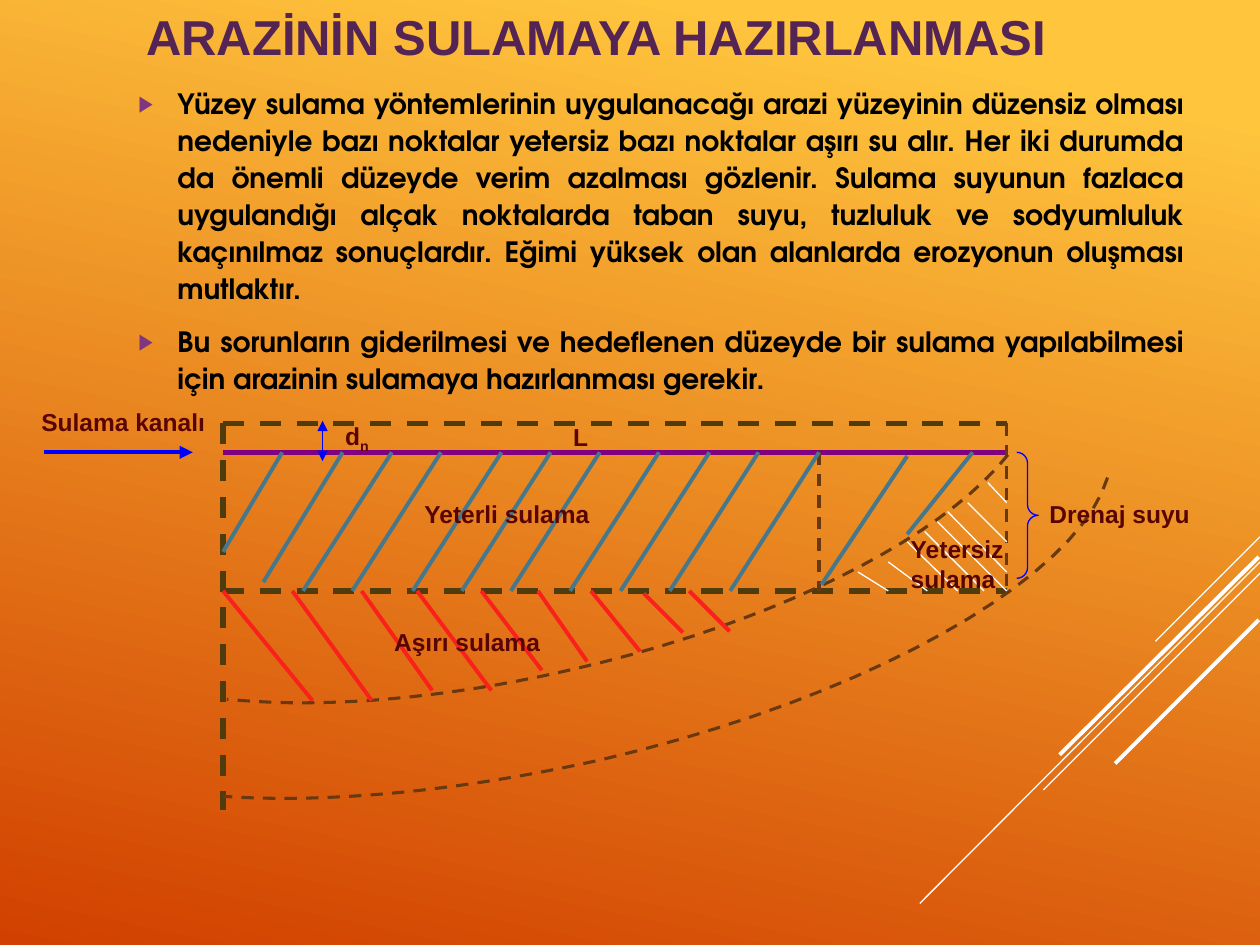
from lxml import etree
from pptx import Presentation
from pptx import util as u
from pptx.dml.color import RGBColor
from pptx.enum import dml, shapes, text
from pptx.oxml.ns import qn

WHITE = RGBColor(0xFF, 0xFF, 0xFF)
BLACK = RGBColor(0, 0, 0)
YELLOW = RGBColor(0xFF, 0xC5, 0x3D)
ORANGE = RGBColor(0xD1, 0x40, 0x00)
PLUM = RGBColor(0x54, 0x24, 0x54)
BULLET = RGBColor(0x7E, 0x36, 0x7E)
MAROON = RGBColor(0x58, 0x05, 0x02)
PURPLE = RGBColor(0x80, 0x00, 0x80)
OLIVE = RGBColor(0x50, 0x3B, 0x0D)
BROWN = RGBColor(0x68, 0x38, 0x0F)
BLUE = RGBColor(0, 0, 0xFF)
TEAL = RGBColor(0x46, 0x78, 0x8D)
RED = RGBColor(0xF9, 0x21, 0x1B)

COLS, ROWS = 100, 75
# Edges of the soil profile, in columns and rows
LEFT, SPLIT, RIGHT = 17.7, 65, 79.9
WATER, SURFACE, ROOT, DEEP = 33.6, 35.9, 46.9, 64.3

TITLE = "ARAZİNİN SULAMAYA HAZIRLANMASI"
BODY = [
    "Yüzey sulama yöntemlerinin uygulanacağı arazi yüzeyinin düzensiz olması "
    "nedeniyle bazı noktalar yetersiz bazı noktalar aşırı su alır. Her iki durumda "
    "da önemli düzeyde verim azalması gözlenir. Sulama suyunun fazlaca uygulandığı "
    "alçak noktalarda taban suyu, tuzluluk ve sodyumluluk kaçınılmaz sonuçlardır. "
    "Eğimi yüksek olan alanlarda erozyonun oluşması mutlaktır.",
    "Bu sorunların giderilmesi ve hedeflenen düzeyde bir sulama yapılabilmesi "
    "için arazinin sulamaya hazırlanması gerekir.",
]
DECOR = [
    (100, 42.6, 91.7, 50.9, 0.75), (100, 44.6, 73, 71.7, 0.75),
    (100, 45.5, 82.8, 62.7, 0.75), (99.9, 44.2, 84.1, 59.9, 2.25),
    (99.9, 49.2, 88.5, 60.6, 2.25),
]
FRAME = [
    (LEFT, SURFACE, RIGHT, SURFACE, PURPLE, 3, False),
    (LEFT, WATER, RIGHT, WATER, OLIVE, 3, True),
    (LEFT, WATER, LEFT, DEEP, OLIVE, 3, True),
    (LEFT, ROOT, RIGHT, ROOT, OLIVE, 3, True),
    (RIGHT, WATER, RIGHT, ROOT, BROWN, 1.75, True),
    (SPLIT, SURFACE, SPLIT, ROOT, BROWN, 1.75, True),
]
# Full-depth hatches all lean by the same run
HATCH_RUN = 7.05
FULL_HATCH_TOPS = [31.1, 35, 39.8, 43.7, 47.6, 52.3, 56.3, 60.2, SPLIT]
ADEQUATE = [
    (22.4, SURFACE, LEFT, 43.8), (27.2, SURFACE, 20.9, 46.2),
    (72, 36.2, 65.2, 46.4), (77.2, SURFACE, 72, 42.4),
] + [(x, SURFACE, x - HATCH_RUN, ROOT) for x in FULL_HATCH_TOPS]
EXCESS = [
    (LEFT, ROOT, 24.8, 55.6), (23.2, ROOT, 29.5, 55.6), (28.7, ROOT, 34.3, 54.8),
    (33.1, ROOT, 39, 54.8), (38.2, ROOT, 43, 53.2), (42.7, ROOT, 46.6, 52.5),
    (46.9, ROOT, 50.8, 51.7), (51.1, 47.1, 54.2, 50.2), (54.7, ROOT, 57.9, 50.1),
]
DEFICIT = [
    (68.1, 45.4, 70.5, ROOT), (70.5, 44.6, 73.6, ROOT), (72, 43, 76, ROOT),
    (73.4, 42.2, 78.1, ROOT), (74.4, 41.4, RIGHT, ROOT), (75.2, 40.6, RIGHT, 45.4),
    (76.8, 39.9, RIGHT, 43), (78.4, 38.3, RIGHT, 39.9),
]
# Each curve: start, then (control, control, end) per piece
CURVES = [
    ((80, 36.1), [((74.6, 42.9), (61.2, 49.5), (45.6, 53.1)),
                  ((35.7, 55.4), (25.9, 56.3), (18, 55.5))]),
    ((87.9, 37.9), [((85.5, 46), (68.7, 55.4), (47.7, 60.3)),
                    ((36.9, 62.7), (26.3, 63.8), (17.7, 63.2))]),
]
LABELS = [
    ("L", 44.5, 33, 7.1), ("Sulama kanalı", 2.3, 31.8, 15.7),
    ("Aşırı sulama", 30.3, 49.3, 15.7), ("Drenaj suyu", 82.3, 39.1, 15.7),
    ("Yetersiz sulama", 71.3, 41.9, 15.7), ("Yeterli sulama", 32.7, 39.1, 15.7),
]


def add_run(p, words, size=14, color=MAROON, font="Arial", baseline=None):
    r = p.add_run()
    r.text = words
    r.font.size, r.font.name, r.font.bold = u.Pt(size), font, True
    r.font.color.rgb = color
    if baseline is not None:
        r._r.get_or_add_rPr().set("baseline", str(baseline * 1000))
    return r


def add_bullet(p, indent, hanging):
    pPr = p._p.get_or_add_pPr()
    pPr.set("marL", str(u.Inches(indent)))
    pPr.set("indent", str(-u.Inches(hanging)))
    color = etree.SubElement(pPr, qn("a:buClr"))
    etree.SubElement(color, qn("a:srgbClr"), val=str(BULLET))
    etree.SubElement(pPr, qn("a:buSzPct"), val="80000")
    etree.SubElement(pPr, qn("a:buFont"), typeface="Arial")
    etree.SubElement(pPr, qn("a:buChar"), char="▶")


def bezier(a, b, c, d, steps=20):
    """Points along a cubic curve, without its start."""
    for i in range(1, steps + 1):
        t = i / steps
        s = 1 - t
        yield tuple(s**3 * j + 3 * s * s * t * k + 3 * s * t * t * m + t**3 * n
                    for j, k, m, n in zip(a, b, c, d))


class Canvas:
    """The current slide, its grid and its style."""

    def __init__(self, prs):
        self.slide = prs.slides.add_slide(prs.slide_layouts[5])
        self.shapes = self.slide.shapes
        self.col, self.row = prs.slide_width / COLS, prs.slide_height / ROWS

    def place(self, *cells):
        """EMU lengths from alternating columns and rows."""
        return [u.Emu(round(n * (self.row if i % 2 else self.col)))
                for i, n in enumerate(cells)]

    def background(self):
        fill = self.slide.background.fill
        fill.gradient()
        fill.gradient_angle = 258
        for stop, color, position in zip(fill.gradient_stops, (YELLOW, ORANGE), (0.1, 1)):
            stop.color.rgb, stop.position = color, position

    def title(self, words, *cells):
        sp = self.shapes.title
        sp.left, sp.top, sp.width, sp.height = self.place(*cells)
        tf = sp.text_frame
        tf.auto_size, tf.vertical_anchor = text.MSO_AUTO_SIZE.NONE, text.MSO_ANCHOR.TOP
        p = tf.paragraphs[0]
        p.alignment = text.PP_ALIGN.LEFT
        add_run(p, words, size=28, color=PLUM)

    def text_box(self, *cells):
        tf = self.shapes.add_textbox(*self.place(*cells)).text_frame
        tf.word_wrap = True
        return tf

    def body(self, paragraphs, *cells):
        tf = self.text_box(*cells)
        tf.vertical_anchor = text.MSO_ANCHOR.MIDDLE
        for i, words in enumerate(paragraphs):
            p = tf.add_paragraph() if i else tf.paragraphs[0]
            p.alignment, p.line_spacing = text.PP_ALIGN.JUSTIFY, 1.1
            p.space_before, p.space_after = u.Pt(3.2 if i else 0), u.Pt(6)
            add_bullet(p, 0.81, 0.31)
            add_run(p, words, size=16, color=BLACK, font="TeX Gyre Adventor")

    def label(self, words, col, row, width, subscript=None):
        tf = self.text_box(col, row, width, 3.3)
        tf.auto_size = text.MSO_AUTO_SIZE.SHAPE_TO_FIT_TEXT
        add_run(tf.paragraphs[0], words)
        if subscript:
            add_run(tf.paragraphs[0], subscript, baseline=-25)

    def stroke(self, sp, color, width, dashed=False):
        sp.line.color.rgb, sp.line.width = color, u.Pt(width)
        if dashed:
            sp.line.dash_style = dml.MSO_LINE.DASH

    def line(self, x1, y1, x2, y2, color, width, dashed=False, arrows=()):
        sp = self.shapes.add_connector(shapes.MSO_CONNECTOR.STRAIGHT,
                                       *self.place(x1, y1, x2, y2))
        self.stroke(sp, color, width, dashed)
        for end in arrows:
            etree.SubElement(sp.line._get_or_add_ln(), qn(f"a:{end}"), type="triangle")
        etree.SubElement(sp._element.spPr, qn("a:effectLst"))

    def hatch(self, lines, color, width=2.25):
        for ends in lines:
            self.line(*ends, color, width)

    def curve(self, start, pieces):
        points = [start]
        for piece in pieces:
            points += bezier(points[-1], *piece)
        first, *rest = [self.place(*point) for point in points]
        builder = self.shapes.build_freeform(*first)
        builder.add_line_segments(rest, close=False)
        self.outline(builder.convert_to_shape(), BROWN, 1.75, True)

    def brace(self, *cells):
        sp = self.shapes.add_shape(shapes.MSO_SHAPE.RIGHT_BRACE, *self.place(*cells))
        sp.adjustments[0] = sp.adjustments[1] = 0.5
        self.outline(sp, BLUE, 0.75)

    def outline(self, sp, *style):
        sp.shadow.inherit = False
        sp.fill.background()
        self.stroke(sp, *style)


def main():
    prs = Presentation()
    prs.slide_width, prs.slide_height = u.Inches(10), u.Inches(7.5)
    c = Canvas(prs)
    c.background()
    for *ends, width in DECOR:
        c.line(*ends, WHITE, width)
    c.title(TITLE, 10.6, 0, 83.1, 5.7)
    c.body(BODY, 5, 5.2, 90, 27.6)
    for edge in FRAME:
        c.line(*edge)
    for start, pieces in CURVES:
        c.curve(start, pieces)
    c.line(25.6, 33.4, 25.6, 36.6, BLUE, 0.75, arrows=("headEnd", "tailEnd"))
    c.line(3.5, SURFACE, 15.3, SURFACE, BLUE, 2.5, arrows=("tailEnd",))
    c.hatch(ADEQUATE, TEAL)
    c.hatch(EXCESS, RED)
    c.hatch(DEFICIT, WHITE, 0.75)
    c.brace(80.7, SURFACE, 1.7, 10)
    c.label("d", 26.4, 32.9, 7.1, subscript="n")
    for label in LABELS:
        c.label(*label)
    prs.save("out.pptx")


if __name__ == "__main__":
    main()
